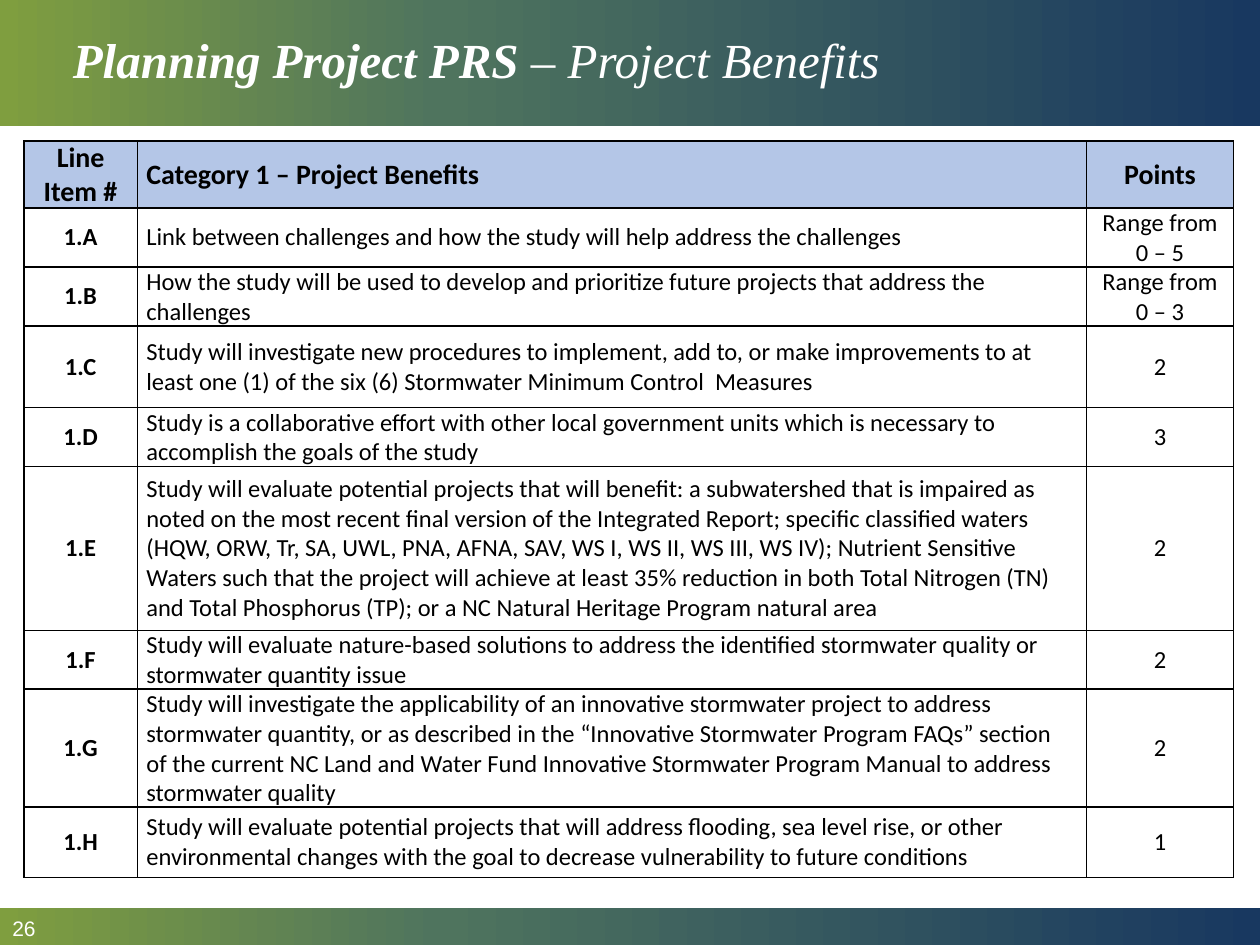
"""Build the slide that lists the points for planning project benefits."""
from copy import deepcopy

from pptx import Presentation
from pptx.dml.color import RGBColor
from pptx.enum.shapes import MSO_SHAPE as Shape
from pptx.enum.text import MSO_ANCHOR as Anchor, PP_ALIGN as Align
from pptx.oxml.ns import qn
from pptx.oxml.xmlchemy import OxmlElement as Element
from pptx.util import Cm, Pt

GREEN = RGBColor(0x7F, 0x9E, 0x3F)
TEAL = RGBColor(0x4F, 0x74, 0x5E)
NAVY = RGBColor(0x18, 0x38, 0x60)
HEADER_BLUE = RGBColor(0xB4, 0xC6, 0xE7)
BLACK = RGBColor(0, 0, 0)
WHITE = RGBColor(255, 255, 255)

BAND_STOPS = [(0, GREEN), (0.35, TEAL), (1, NAVY)]
TITLE = {"name": "Times New Roman", "size": Pt(28), "bold": True, "italic": True}
SUBTITLE = {**TITLE, "bold": False}
NUMBER = {"name": "Arial", "size": Pt(12)}
HEADER = {"name": "Calibri", "size": Pt(16), "bold": True}
ITEM = {**HEADER, "size": Pt(14)}
BODY = {**ITEM, "bold": False}
CELL = {"margin_left": Cm(0.18), "margin_right": Cm(0.18), "margin_top": 0,
        "margin_bottom": 0, "vertical_anchor": Anchor.MIDDLE}

COLUMN_WIDTHS = [2.29, 19.13, 2.97]
COLUMN_ALIGNS = [Align.CENTER, Align.LEFT, Align.CENTER]
ROWS = [
    (1.35, "Line Item #", "Category 1 – Project Benefits", "Points"),
    (1.17, "1.A", "Link between challenges and how the study will help address the "
     "challenges", "Range from 0 – 5"),
    (1.17, "1.B", "How the study will be used to develop and prioritize future projects "
     "that address the challenges", "Range from 0 – 3"),
    (1.65, "1.C", "Study will investigate new procedures to implement, add to, or make "
     "improvements to at least one (1) of the six (6) Stormwater Minimum Control  "
     "Measures", "2"),
    (1.17, "1.D", "Study is a collaborative effort with other local government units "
     "which is necessary to accomplish the goals of the study", "3"),
    (3.3, "1.E", "Study will evaluate potential projects that will benefit: a "
     "subwatershed that is impaired as noted on the most recent final version of the "
     "Integrated Report; specific classified waters (HQW, ORW, Tr, SA, UWL, PNA, AFNA, "
     "SAV, WS I, WS II, WS III, WS IV); Nutrient Sensitive Waters such that the project "
     "will achieve at least 35% reduction in both Total Nitrogen (TN) and Total "
     "Phosphorus (TP); or a NC Natural Heritage Program natural area", "2"),
    (1.17, "1.F", "Study will evaluate nature-based solutions to address the identified "
     "stormwater quality or stormwater quantity issue", "2"),
    (2.34, "1.G", "Study will investigate the applicability of an innovative stormwater "
     "project to address stormwater quantity, or as described in the “Innovative "
     "Stormwater Program FAQs” section of the current NC Land and Water Fund Innovative "
     "Stormwater Program Manual to address stormwater quality", "2"),
    (1.42, "1.H", "Study will evaluate potential projects that will address flooding, "
     "sea level rise, or other environmental changes with the goal to decrease "
     "vulnerability to future conditions", "1"),
]


def apply(target, values):
    """Set each attribute named in values on the target."""
    for name, value in values.items():
        setattr(target, name, value)


def add_run(p, text, font, color):
    """Add a formatted run to a paragraph."""
    r = p.add_run()
    r.text = text
    apply(r.font, font)
    r.font.color.rgb = color


def add_band(s, top, height):
    """Add a full-width gradient band."""
    sp = s.shapes.add_shape(Shape.RECTANGLE, 0, Cm(top), Cm(25.4), Cm(height))
    sp.shadow.inherit = False
    sp.line.fill.background()
    sp.fill.gradient()
    sp.fill.gradient_angle = 0
    stops = sp._element.spPr.find(".//" + qn("a:gsLst"))
    stops.append(deepcopy(stops[0]))
    for stop, (position, color) in zip(sp.fill.gradient_stops, BAND_STOPS):
        stop.position = position
        stop.color.rgb = color


def add_text(s, box, runs, line_spacing=1.0):
    """Add a white, vertically centred text box."""
    tf = s.shapes.add_textbox(*map(Cm, box)).text_frame
    apply(tf, {"word_wrap": True, "vertical_anchor": Anchor.MIDDLE})
    p = tf.paragraphs[0]
    p.line_spacing = line_spacing
    for text, font in runs:
        add_run(p, text, font, WHITE)


def add_borders(cell):
    """Give a cell a thin black line on each side."""
    tc_pr = cell._tc.get_or_add_tcPr()
    for side in "LRTB":
        ln = Element(f"a:ln{side}")
        ln.set("w", str(Pt(1)))
        fill = Element("a:solidFill")
        color = Element("a:srgbClr")
        color.set("val", str(BLACK))
        fill.append(color)
        ln.append(fill)
        tc_pr.append(ln)


def fill_cell(cell, text, font, align, is_header):
    """Write and format one table cell."""
    apply(cell, CELL)
    add_borders(cell)
    if is_header:
        cell.fill.solid()
        cell.fill.fore_color.rgb = HEADER_BLUE
    else:
        cell.fill.background()
    p = cell.text_frame.paragraphs[0]
    p.alignment = align
    add_run(p, text, font, BLACK)


def add_points_table(s):
    """Add the table of line items and their points."""
    height = sum(row[0] for row in ROWS)
    frame = s.shapes.add_table(len(ROWS), len(COLUMN_WIDTHS), Cm(0.48), Cm(2.84),
                               Cm(sum(COLUMN_WIDTHS)), Cm(height))
    table = frame.table
    apply(table, {"first_row": True, "horz_banding": False})
    for column, width in zip(table.columns, COLUMN_WIDTHS):
        column.width = Cm(width)
    for i, (row_height, *texts) in enumerate(ROWS):
        table.rows[i].height = Cm(row_height)
        fonts = [ITEM, BODY, BODY] if i else [HEADER] * 3
        for j, (text, font, align) in enumerate(zip(texts, fonts, COLUMN_ALIGNS)):
            fill_cell(table.cell(i, j), text, font, align, i == 0)
    table.cell(len(ROWS) - 1, 1).text_frame.paragraphs[0].space_after = Pt(3)


def main():
    """Build and save the slide."""
    prs = Presentation()
    apply(prs, {"slide_width": Cm(25.4), "slide_height": Cm(19.05)})
    s = prs.slides.add_slide(prs.slide_layouts[6])
    add_band(s, 0, 2.54)
    add_band(s, 18.31, 0.74)
    add_text(s, (1.22, 0, 24.18, 2.54),
             [("Planning Project PRS ", TITLE), ("– Project Benefits", SUBTITLE)], 0.9)
    add_text(s, (0, 18.34, 4.85, 0.74), [("26", NUMBER)])
    add_points_table(s)
    prs.save("out.pptx")


if __name__ == "__main__":
    main()
